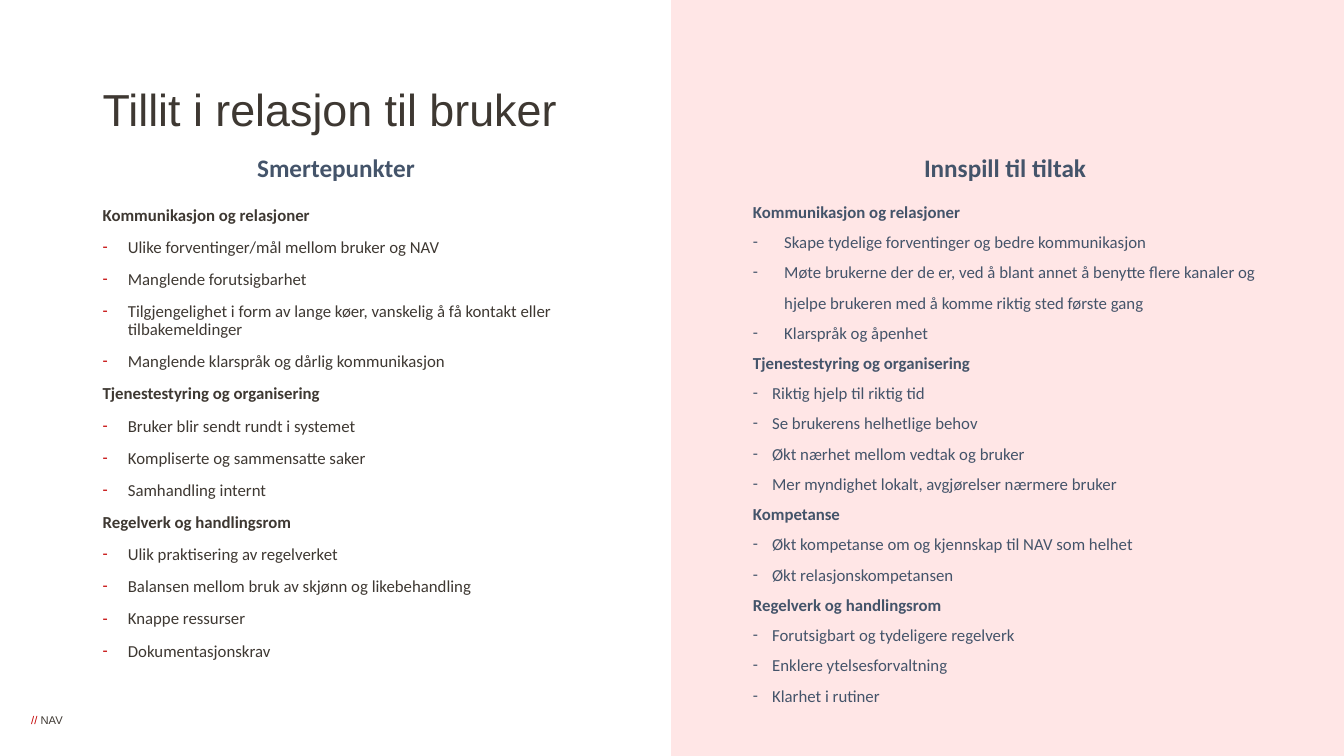
from dataclasses import dataclass

from lxml.etree import SubElement
from pptx import Presentation
from pptx.dml.color import RGBColor
from pptx.enum.shapes import MSO_SHAPE as Preset
from pptx.enum.text import MSO_ANCHOR as Anchor, PP_ALIGN as Align
from pptx.oxml.ns import qn
from pptx.util import Inches, Pt

# Content: (section heading, hanging indent in inches, points)
TITLE = "Tillit i relasjon til bruker"
FOOTER = ("// ", "NAV")
COLUMN_HEADINGS = ("Smertepunkter", "Innspill til tiltak ")
PAIN_POINTS = [
    ("Kommunikasjon og relasjoner", 0.25, [
        "Ulike forventinger/mål mellom bruker og NAV",
        "Manglende forutsigbarhet",
        "Tilgjengelighet i form av lange køer, vanskelig å få kontakt eller tilbakemeldinger",
        "Manglende klarspråk og dårlig kommunikasjon",
    ]),
    ("Tjenestestyring og organisering", 0.25, [
        "Bruker blir sendt rundt i systemet",
        "Kompliserte og sammensatte saker",
        "Samhandling internt",
    ]),
    ("Regelverk og handlingsrom", 0.25, [
        "Ulik praktisering av regelverket",
        "Balansen mellom bruk av skjønn og likebehandling",
        "Knappe ressurser",
        "Dokumentasjonskrav",
    ]),
]
MEASURES = [
    ("Kommunikasjon og relasjoner", 0.31, [
        "Skape tydelige forventinger og bedre kommunikasjon",
        "Møte brukerne der de er, ved å blant annet å benytte flere kanaler og "
        "hjelpe brukeren med å komme riktig sted første gang",
        "Klarspråk og åpenhet",
    ]),
    ("Tjenestestyring og organisering", 0.19, [
        "Riktig hjelp til riktig tid",
        "Se brukerens helhetlige behov",
        "Økt nærhet mellom vedtak og bruker",
        "Mer myndighet lokalt, avgjørelser nærmere bruker",
    ]),
    ("Kompetanse", 0.19, [
        "Økt kompetanse om og kjennskap til NAV som helhet",
        "Økt relasjonskompetansen",
    ]),
    ("Regelverk og handlingsrom", 0.19, [
        "Forutsigbart og tydeligere regelverk",
        "Enklere ytelsesforvaltning",
        "Klarhet i rutiner",
    ]),
]


@dataclass(frozen=True)
class Theme:
    dark: str = "3E3832"
    slate: str = "44546A"
    red: str = "C30000"
    pink: str = "FFE6E6"
    display: str = "Arial"
    body: str = "Calibri"
    title_size: int = 32
    heading_size: int = 18
    body_size: int = 12
    footer_size: int = 8


THEME = Theme()
WIDTH, HEIGHT = 13.33, 7.5
HALF = WIDTH / 2
MARGIN = 0.92

presentation = Presentation()
presentation.slide_width, presentation.slide_height = Inches(WIDTH), Inches(HEIGHT)
slide = presentation.slides.add_slide(presentation.slide_layouts[6])


def add_run(paragraph, text, font, size, color, bold=False):
    run = paragraph.add_run()
    run.text = text
    run.font.name, run.font.size, run.font.bold = font, Pt(size), bold
    run.font.color.rgb = RGBColor.from_string(color)


def add_text_box(left, top, width, height):
    frame = slide.shapes.add_textbox(*map(Inches, (left, top, width, height))).text_frame
    frame.word_wrap = True
    return frame


def add_panel(left, top, width, height, outlined):
    panel = slide.shapes.add_shape(
        Preset.RECTANGLE, *map(Inches, (left, top, width, height)))
    panel.shadow.inherit = False
    pink = RGBColor.from_string(THEME.pink)
    panel.fill.solid()
    panel.fill.fore_color.rgb = pink
    if outlined:
        panel.line.color.rgb = pink
        panel.line.width = Pt(1)
    else:
        panel.line.fill.background()
    return panel.text_frame


def add_dash(paragraph, indent, color):
    properties = paragraph._p.get_or_add_pPr()
    properties.set("marL", str(Inches(indent)))
    properties.set("indent", str(-Inches(indent)))
    SubElement(SubElement(properties, qn("a:buClr")), qn("a:srgbClr"), val=color)
    SubElement(properties, qn("a:buFont"), typeface=THEME.body)
    SubElement(properties, qn("a:buChar"), char="-")


def fill_sections(frame, sections, color, dash_color, line_spacing, gap):
    lines = [(text, indent, text is heading)
             for heading, indent, points in sections
             for text in (heading, *points)]
    for index, (text, indent, is_heading) in enumerate(lines):
        paragraph = frame.add_paragraph() if index else frame.paragraphs[0]
        if not is_heading:
            add_dash(paragraph, indent, dash_color)
        paragraph.alignment = Align.LEFT
        paragraph.line_spacing = line_spacing
        paragraph.space_before = Pt(gap if index else 0)
        add_run(paragraph, text, THEME.body, THEME.body_size, color, is_heading)


# Footer
footer = add_text_box(0.31, 7.08, 0.35, 0.13)
footer.word_wrap = False
footer.margin_left = footer.margin_right = footer.margin_top = footer.margin_bottom = 0
for part, color in zip(FOOTER, (THEME.red, THEME.dark)):
    add_run(footer.paragraphs[0], part, THEME.display, THEME.footer_size, color)

# Right half background and title
add_panel(HALF, 0, HALF, HEIGHT, outlined=True)
title = add_text_box(MARGIN, 0.53, 11.5, 1.17)
title.vertical_anchor = Anchor.MIDDLE
title.paragraphs[0].line_spacing = 0.9
add_run(title.paragraphs[0], TITLE, THEME.display, THEME.title_size, THEME.dark)

# Lists
pain_frame = add_text_box(MARGIN, 2, 5.14, 4.76)
fill_sections(pain_frame, PAIN_POINTS, THEME.dark, THEME.red, 0.9, 10)
measure_frame = add_panel(7.37, 1.85, 5.5, 5.22, outlined=False)
measure_frame.word_wrap = True
measure_frame.vertical_anchor = Anchor.TOP
fill_sections(measure_frame, MEASURES, THEME.slate, THEME.slate, 1.5, 0)

# Column headings, one centred over each half
for column, heading in enumerate(COLUMN_HEADINGS):
    paragraph = add_text_box(column * HALF, 1.46, HALF, 0.4).paragraphs[0]
    paragraph.alignment = Align.CENTER
    add_run(paragraph, heading, THEME.body, THEME.heading_size, THEME.slate, True)

presentation.save("out.pptx")
